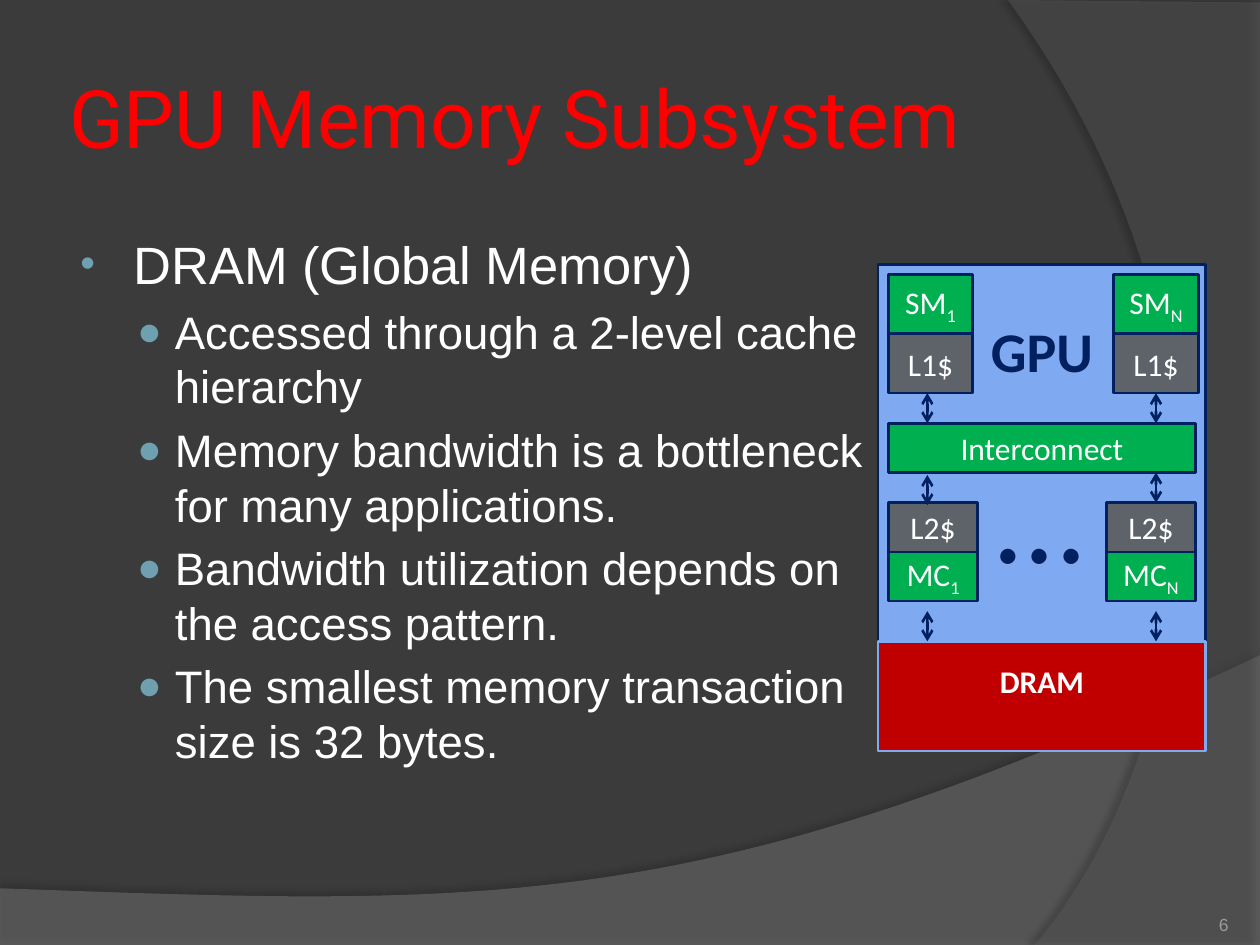
from lxml import etree
from pptx import Presentation
from pptx import util as u
from pptx.dml.color import RGBColor
from pptx.enum import shapes, text
from pptx.oxml.ns import qn

COLORS = {
    "background": "3B3B3B", "lower_wave": "7F7F7F", "right_wave": "5E5E5E",
    "title": "FF0000", "white": "FFFFFF", "bullet": "6EA0B0", "number": "9D9B9A",
    "gpu": "7FAAF1", "navy": "002060", "dram": "C00000",
    "unit": "00B050", "cache": "5E636A", "shadow": "000000",
}


def rgb(name):
    return RGBColor.from_string(COLORS[name])


def child(parent, tag, **attributes):
    """Append a drawing element with the given attributes."""
    element = etree.SubElement(parent, qn(tag))
    for key, value in attributes.items():
        element.set(key, str(value))
    return element


def write(paragraph, words, size=18, font="Calibri", color="white", bold=False, sub=False):
    run = paragraph.add_run()
    run.text = words
    run.font.size = u.Pt(size)
    run.font.name = font
    run.font.bold = bold
    run.font.color.rgb = rgb(color)
    if sub:
        run.font._element.set("baseline", "-25000")


def curve(p0, p1, p2, p3, steps=48):
    """Points along a cubic Bezier curve, start left out."""
    for i in range(1, steps + 1):
        t = i / steps
        weights = ((1 - t) ** 3, 3 * t * (1 - t) ** 2, 3 * t * t * (1 - t), t ** 3)
        yield tuple(sum(w * p[axis] for w, p in zip(weights, (p0, p1, p2, p3)))
                    for axis in (0, 1))


class SlideKit:
    line_width = u.Pt(1.5)

    def __init__(self, slide):
        self.slide = slide
        self.shapes = slide.shapes

    def background(self, color):
        fill = self.slide.background.fill
        fill.solid()
        fill.fore_color.rgb = rgb(color)

    def wave(self, points, color, alpha, shadow_alpha, distance, direction):
        corners = [(u.Inches(x), u.Inches(y)) for x, y in points]
        builder = self.shapes.build_freeform(*corners[0])
        builder.add_line_segments(corners[1:], close=True)
        wave = builder.convert_to_shape()
        wave.fill.solid()
        wave.fill.fore_color.rgb = rgb(color)
        wave.line.fill.background()
        wave.shadow.inherit = False
        properties = wave._element.spPr
        child(properties.find(".//" + qn("a:srgbClr")), "a:alpha", val=alpha * 1000)
        shadow = child(properties.find(qn("a:effectLst")), "a:outerShdw",
                       blurRad=u.Pt(4), dist=u.Pt(distance), dir=direction * 60000,
                       algn="ctr", rotWithShape=0)
        tint = child(shadow, "a:srgbClr", val=COLORS["shadow"])
        child(tint, "a:alpha", val=shadow_alpha * 1000)

    def textbox(self, box, words=None, inset=None, anchor="TOP", align="LEFT", wrap=True, **style):
        frame = self.shapes.add_textbox(*map(u.Inches, box)).text_frame
        frame.word_wrap = wrap
        frame.vertical_anchor = text.MSO_ANCHOR[anchor]
        if inset is not None:
            frame.margin_left = frame.margin_right = u.Inches(inset)
            frame.margin_top = frame.margin_bottom = u.Inches(inset)
        if words:
            frame.paragraphs[0].alignment = text.PP_ALIGN[align]
            write(frame.paragraphs[0], words, **style)
        return frame

    def bullet(self, paragraph, words, size, left, hang, mark, mark_size):
        write(paragraph, words, size=size, font="Arial")
        paragraph.space_before = u.Pt(size * 0.2)
        properties = paragraph._p.get_or_add_pPr()
        properties.set("marL", str(u.Inches(left)))
        properties.set("indent", str(-u.Inches(hang)))
        child(child(properties, "a:buClr"), "a:srgbClr", val=COLORS["bullet"])
        child(properties, "a:buSzPct", val=mark_size * 1000)
        child(properties, "a:buFont", typeface="Arial")
        child(properties, "a:buChar", char=mark)

    def block(self, box, words, fill, line="navy", sub=None, bottom=0.05, **style):
        block = self.shapes.add_shape(shapes.MSO_SHAPE.RECTANGLE, *map(u.Inches, box))
        block.shadow.inherit = False
        block.fill.solid()
        block.fill.fore_color.rgb = rgb(fill)
        block.line.color.rgb = rgb(line)
        block.line.width = self.line_width
        frame = block.text_frame
        frame.word_wrap = True
        frame.vertical_anchor = text.MSO_ANCHOR.MIDDLE
        frame.margin_bottom = u.Inches(bottom)
        label = frame.paragraphs[0]
        label.alignment = text.PP_ALIGN.CENTER
        write(label, words, **style)
        if sub:
            write(label, sub, sub=True, **style)
        return block

    def arrow(self, x, top, length=0.24):
        arrow = self.shapes.add_connector(
            shapes.MSO_CONNECTOR.STRAIGHT,
            u.Inches(x), u.Inches(top), u.Inches(x), u.Inches(top + length))
        arrow.line.color.rgb = rgb("navy")
        arrow.line.width = self.line_width
        line = arrow.line._get_or_add_ln()
        child(line, "a:headEnd", type="arrow")
        child(line, "a:tailEnd", type="arrow")
        child(arrow._element.spPr, "a:effectLst")
        return arrow


def main():
    deck = Presentation()
    deck.slide_width, deck.slide_height = u.Inches(10), u.Inches(7.5)
    kit = SlideKit(deck.slides.add_slide(deck.slide_layouts[6]))

    # Backdrop
    kit.background("background")
    lower = [(0, 7.05), (0, 7.51), (10, 7.51), (10, 5.2),
             *curve((10, 5.2), (5.59, 7.29), (3.91, 7.19), (0, 7.05))]
    kit.wave(lower, "lower_wave", 45, 35, 3.5, 270)
    right = [(10, 0.02), (10, 7.5), (8.21, 7.5),
             *curve((8.21, 7.5), (9.35, 6.19), (10.18, 3), (8, 0))]
    kit.wave(right, "right_wave", 40, 45, 4, 180)

    # Title, bullets and slide number
    kit.textbox((0.5, 0.3, 8.17, 1.25), "GPU Memory Subsystem", inset=0.05, anchor="MIDDLE",
                size=46, font="Roboto", color="title")
    body = kit.textbox((0.5, 1.79, 6.47, 4.95))
    kit.bullet(body.paragraphs[0], "DRAM (Global Memory)", 30, 0.46, 0.42, "•", 80)
    for point in (
        "Accessed through a 2-level cache hierarchy",
        "Memory bandwidth is a bottleneck for many applications.",
        "Bandwidth utilization depends on the access pattern.",
        "The smallest memory transaction size is 32 bytes.",
    ):
        paragraph = body.add_paragraph()
        paragraph.level = 1
        kit.bullet(paragraph, point, 26, 0.79, 0.3, "●", 90)
    kit.textbox((8.92, 7.02, 0.83, 0.4), "6", inset=0, anchor="BOTTOM", align="RIGHT",
                size=10, font="Arial", color="number")

    # GPU and DRAM; the bottom inset lifts their labels
    kit.block((6.97, 2.1, 2.6, 2.99), "GPU", "gpu", bottom=1.68,
              size=32, color="navy", bold=True)
    kit.block((6.97, 5.09, 2.6, 0.87), "DRAM", "dram", line="gpu", bottom=0.29, bold=True)

    # First and last column of cores, caches and memory controllers
    core_caches = []
    for index, core_x, memory_x in (("1", 7.05, 7.05), ("N", 8.84, 8.78)):
        kit.block((core_x, 2.18, 0.67, 0.47), "SM", "unit", sub=index)
        core_caches.append(kit.block((core_x, 2.65, 0.67, 0.47), "L1$", "cache"))
        kit.block((memory_x, 4.38, 0.71, 0.39), "MC", "unit", sub=index)
        kit.block((memory_x, 3.99, 0.71, 0.39), "L2$", "cache")
    kit.block((7.05, 3.36, 2.44, 0.39), "Interconnect", "unit")
    kit.textbox((7.81, 3.42, 0.9, 1.31), "…", wrap=False, size=72, color="navy")

    # Data paths
    first_x, last_x = 7.36, 8.84 + 0.67 / 2
    for x, tops in ((first_x, (3.12, 3.77, 4.85)), (last_x, (3.75, 4.85))):
        for top in tops:
            kit.arrow(x, top)
    kit.arrow(last_x, 3.12).begin_connect(core_caches[-1], 2)

    deck.save("out.pptx")


if __name__ == "__main__":
    main()
